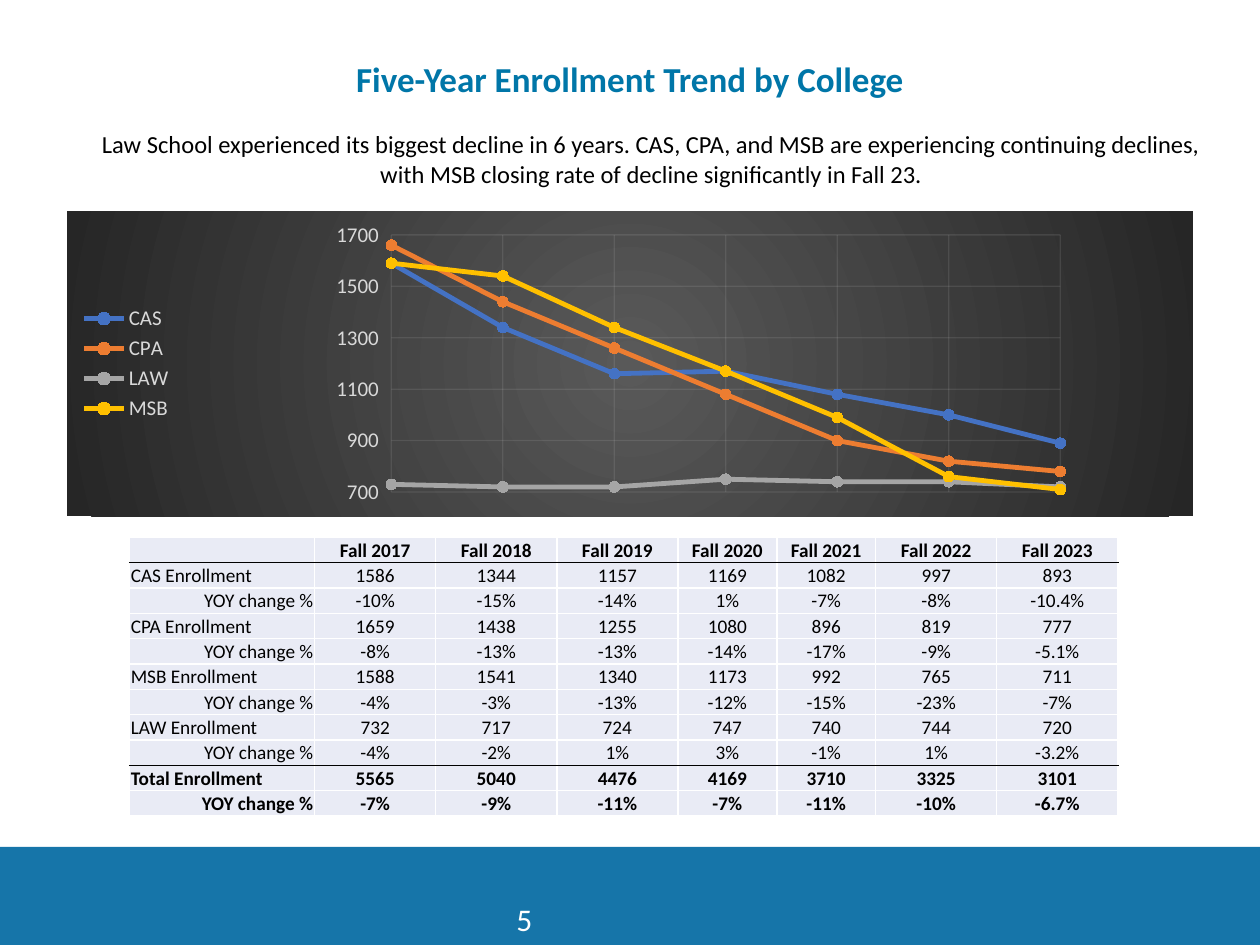
from dataclasses import dataclass

from lxml.etree import SubElement
from pptx import Presentation
from pptx.chart.data import CategoryChartData
from pptx.dml.color import RGBColor
from pptx.enum.chart import XL_CHART_TYPE as ChartType
from pptx.enum.chart import XL_LEGEND_POSITION as LegendSide
from pptx.enum.chart import XL_MARKER_STYLE as Marker
from pptx.enum.chart import XL_TICK_MARK as Tick
from pptx.enum.shapes import MSO_SHAPE as Shape
from pptx.enum.text import MSO_ANCHOR as Anchor
from pptx.enum.text import MSO_AUTO_SIZE as AutoSize
from pptx.enum.text import PP_ALIGN as Align
from pptx.oxml import parse_xml
from pptx.oxml.ns import nsdecls, qn
from pptx.util import Pt


@dataclass(frozen=True)
class Theme:
    """Colours, font and type sizes of the slide."""
    font: str = "Calibri"
    title: str = "0076A8"
    band: str = "1675A9"
    ink: str = "000000"
    paper: str = "FFFFFF"
    cell: str = "E9EBF5"
    chart_text: str = "D9D9D9"
    grid: str = "F2F2F2"
    glow: str = "595959"
    dusk: str = "262626"
    series: tuple = ("4472C4", "ED7D31", "A5A5A5", "FFC000")
    title_size: int = 20
    lead_size: int = 14
    table_size: int = 11
    chart_size: int = 12
    number_size: int = 18


THEME = Theme()
YEARS = range(2017, 2024)
ENROLLMENT = {
    "CAS": (1586, 1344, 1157, 1169, 1082, 997, 893),
    "CPA": (1659, 1438, 1255, 1080, 896, 819, 777),
    "MSB": (1588, 1541, 1340, 1173, 992, 765, 711),
    "LAW": (732, 717, 724, 747, 740, 744, 720),
    "Total": (5565, 5040, 4476, 4169, 3710, 3325, 3101),
}
CHANGE = {
    "CAS": ("-10%", "-15%", "-14%", "1%", "-7%", "-8%", "-10.4%"),
    "CPA": ("-8%", "-13%", "-13%", "-14%", "-17%", "-9%", "-5.1%"),
    "MSB": ("-4%", "-3%", "-13%", "-12%", "-15%", "-23%", "-7%"),
    "LAW": ("-4%", "-2%", "1%", "3%", "-1%", "1%", "-3.2%"),
    "Total": ("-7%", "-9%", "-11%", "-7%", "-11%", "-10%", "-6.7%"),
}
LEAD = ("Law School experienced its biggest decline in 6 years. CAS, CPA, and MSB are "
        "experiencing continuing declines, with MSB closing rate of decline "
        "significantly in Fall 23.")


def rgb(code):
    """Turn a hex code into a colour."""
    return RGBColor.from_string(code)


def style(font, size, color, bold=False):
    """Format a font in the theme's typeface."""
    font.name, font.size, font.bold = THEME.font, Pt(size), bold
    font.color.rgb = rgb(color)


def write(frame, text, size, color, align=Align.LEFT, bold=False):
    """Write one formatted run into the first paragraph of a frame."""
    para = frame.paragraphs[0]
    para.alignment = align
    span = para.add_run()
    span.text = text
    style(span.font, size, color, bold)


def add_title(page, box):
    """Place the title placeholder in its box."""
    title = page.shapes.title
    title.left, title.top, title.width, title.height = map(Pt, box)
    frame = title.text_frame
    frame.auto_size, frame.vertical_anchor = AutoSize.NONE, Anchor.MIDDLE
    write(frame, "Five-Year Enrollment Trend by College", THEME.title_size,
          THEME.title, Align.CENTER, True)


def add_lead(page, box):
    """Place the centred summary."""
    lead = page.shapes.add_textbox(*map(Pt, box))
    lead.fill.solid()
    lead.fill.fore_color.rgb = rgb(THEME.paper)
    lead.text_frame.word_wrap = True
    write(lead.text_frame, LEAD, THEME.lead_size, THEME.ink, Align.CENTER)


def add_footer(page, box):
    """Place the footer band and the slide number on it."""
    left, top, width, height = box
    band = page.shapes.add_shape(Shape.RECTANGLE, *map(Pt, box))
    band.shadow.inherit = False
    band.fill.solid()
    band.fill.fore_color.rgb = rgb(THEME.band)
    band.line.fill.background()
    number = page.shapes.add_textbox(Pt(left + 0.4 * width), Pt(top + 26.6), Pt(24), Pt(29))
    number.text_frame.word_wrap = False
    write(number.text_frame, "5", THEME.number_size, THEME.paper)


def set_borders(cell, top, bottom):
    """Draw the four borders of a table cell."""
    props = cell._tc.get_or_add_tcPr()
    sides = {"L": THEME.paper, "R": THEME.paper, "T": top, "B": bottom}
    for side, color in sides.items():
        line = SubElement(props, qn(f"a:ln{side}"), w=str(Pt(1)))
        SubElement(SubElement(line, qn("a:solidFill")), qn("a:srgbClr"), val=color)


def add_enrollment_table(page, box):
    """Place the enrollment table with two rows for each college."""
    rows = [("", *(f"Fall {year}" for year in YEARS))]
    for college, counts in ENROLLMENT.items():
        rows.append((f"{college} Enrollment", *map(str, counts)))
        rows.append(("YOY change %", *CHANGE[college]))
    table = page.shapes.add_table(len(rows), len(rows[0]), *map(Pt, box)).table
    table.first_row = table.horz_banding = False
    for column, width in zip(table.columns, (105.8, *[69.2] * 3, *[56.5] * 2, *[69.2] * 2)):
        column.width = Pt(width)
    ruled = (0, len(rows) - 3)
    for r, texts in enumerate(rows):
        table.rows[r].height = Pt(box[3] / len(rows))
        bold = r == 0 or r > ruled[1]
        top = THEME.ink if r - 1 in ruled else THEME.paper
        bottom = THEME.ink if r in ruled else THEME.paper
        for c, text in enumerate(texts):
            cell = table.cell(r, c)
            cell.vertical_anchor = Anchor.MIDDLE
            cell.margin_left = cell.margin_right = cell.margin_top = Pt(0.72)
            cell.margin_bottom = Pt(0)
            set_borders(cell, top, bottom)
            cell.fill.solid()
            cell.fill.fore_color.rgb = rgb(THEME.cell)
            if text:
                label = Align.LEFT if r % 2 else Align.RIGHT
                write(cell.text_frame, text, THEME.table_size, THEME.ink,
                      Align.CENTER if c else label, bold)
            else:
                SubElement(cell.text_frame.paragraphs[0]._p, qn("a:endParaRPr"),
                           sz=str(THEME.table_size * 100))


def finish_chart_xml(chart):
    """Add the radial backdrop, plot position, faint grid and edge-to-edge points."""
    root = chart.element
    stops = "".join(f'<a:gs pos="{pos}"><a:srgbClr val="{color}"/></a:gs>'
                    for pos, color in ((0, THEME.glow), (100000, THEME.dusk)))
    root.find(qn("c:chart")).addnext(parse_xml(
        f'<c:spPr {nsdecls("c", "a")}><a:gradFill><a:gsLst>{stops}</a:gsLst>'
        '<a:path path="circle"><a:fillToRect l="50000" t="50000" r="50000" b="50000"/>'
        '</a:path></a:gradFill><a:ln><a:noFill/></a:ln></c:spPr>'))
    plot_area = next(root.iter(qn("c:plotArea")))
    for layout in plot_area.findall(qn("c:layout")):
        plot_area.remove(layout)
    places = {"layoutTarget": "inner", "xMode": "edge", "yMode": "edge",
              "x": 0.288, "y": 0.078, "w": 0.594, "h": 0.844}
    parts = "".join(f'<c:{name} val="{value}"/>' for name, value in places.items())
    plot_area.insert(0, parse_xml(f'<c:layout {nsdecls("c")}><c:manualLayout>{parts}'
                                  '</c:manualLayout></c:layout>'))
    for grid in root.iter(qn("c:majorGridlines")):
        for color in grid.iter(qn("a:srgbClr")):
            SubElement(color, qn("a:alpha"), val="10000")
    value_axis = next(root.iter(qn("c:valAx")))
    for between in value_axis.findall(qn("c:crossBetween")):
        value_axis.remove(between)
    value_axis.find(qn("c:crosses")).addnext(
        parse_xml(f'<c:crossBetween {nsdecls("c")} val="midCat"/>'))


def add_trend_chart(page, box):
    """Place the line chart of enrollment by college, rounded to tens."""
    data = CategoryChartData()
    data.categories = [str(n + 1) for n in range(len(YEARS))]
    for college in sorted(ENROLLMENT.keys() - {"Total"}):
        data.add_series(college, [round(count, -1) for count in ENROLLMENT[college]])
    chart = page.shapes.add_chart(ChartType.LINE_MARKERS, *map(Pt, box), data).chart
    style(chart.font, THEME.chart_size, THEME.chart_text)
    chart.has_title = False
    chart.has_legend = True
    chart.legend.position = LegendSide.LEFT
    chart.legend.include_in_layout = False
    style(chart.legend.font, THEME.chart_size, THEME.chart_text)
    values = chart.value_axis
    values.minimum_scale, values.maximum_scale, values.major_unit = 700, 1700, 200
    values.major_tick_mark = Tick.OUTSIDE
    values.format.line.fill.background()
    style(values.tick_labels.font, THEME.chart_size, THEME.chart_text)
    chart.category_axis.visible = False
    for axis in (values, chart.category_axis):
        axis.has_major_gridlines = True
        line = axis.major_gridlines.format.line
        line.width, line.color.rgb = Pt(0.75), rgb(THEME.grid)
    chart.plots[0].vary_by_categories = False
    for series, color in zip(chart.plots[0].series, THEME.series):
        series.smooth = False
        series.format.line.width, series.format.line.color.rgb = Pt(2.75), rgb(color)
        series.marker.style, series.marker.size = Marker.CIRCLE, 6
        series.marker.format.fill.solid()
        series.marker.format.fill.fore_color.rgb = rgb(color)
        series.marker.format.line.color.rgb = rgb(color)
    finish_chart_xml(chart)


def main():
    """Build the enrollment slide and save it."""
    deck = Presentation()
    deck.slide_width, deck.slide_height = Pt(720), Pt(540)
    page = deck.slides.add_slide(deck.slide_layouts[5])
    add_title(page, (0, 29.2, 720, 31.5))
    add_lead(page, (38.2, 70.3, 668, 41))
    add_enrollment_table(page, (74, 307, 564.8, 159.6))
    add_trend_chart(page, (38.2, 120.7, 643.7, 174.2))
    add_footer(page, (0, 484, 720, 56))
    deck.save("out.pptx")


if __name__ == "__main__":
    main()
